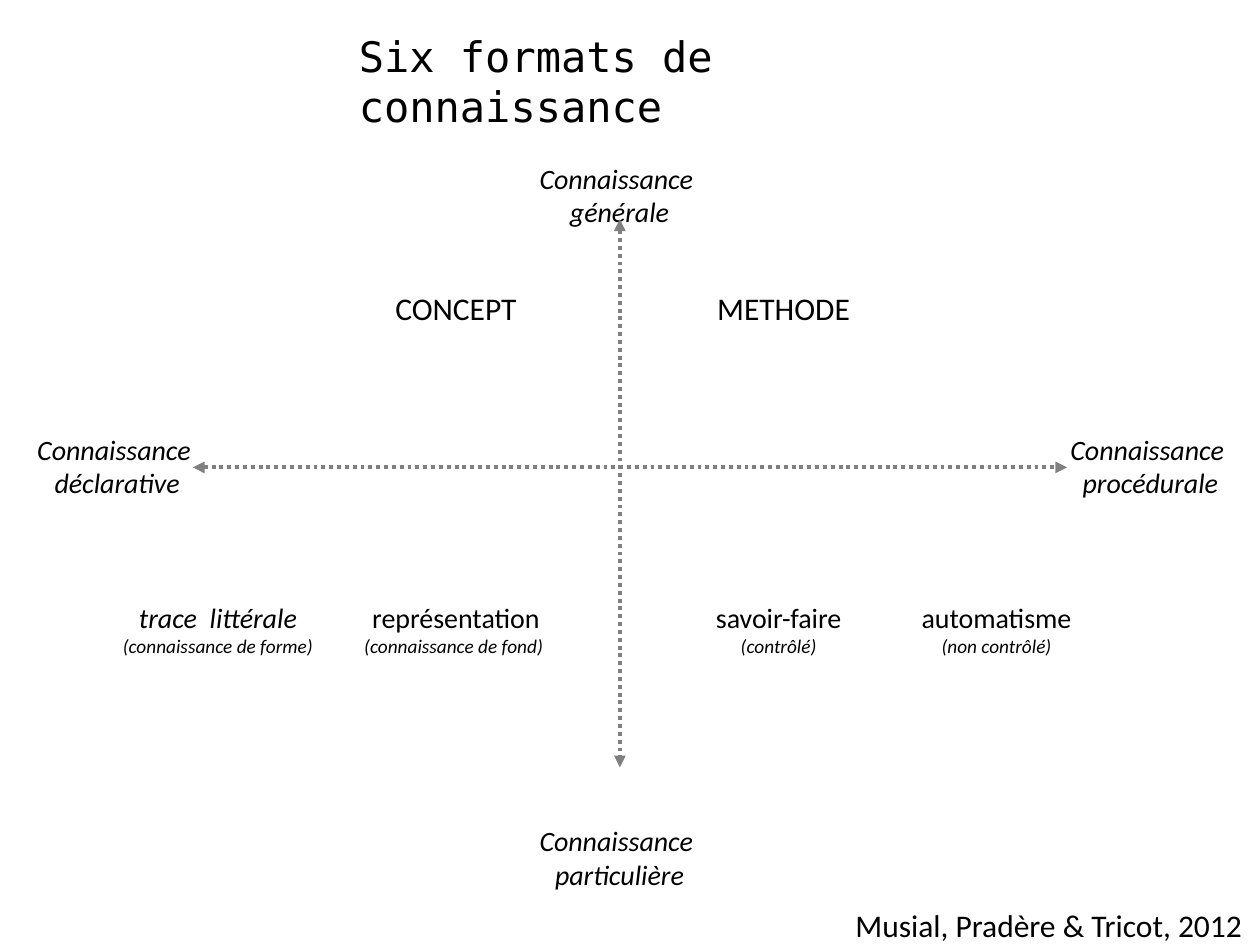
from lxml import etree
from pptx import Presentation
from pptx import util as u
from pptx.dml.color import RGBColor
from pptx.enum import dml, shapes, text
from pptx.oxml.ns import qn

COLORS = {"text": "000000", "axis": "808080", "fill": "FFFFFF"}
BODY_FONT, TITLE_FONT = "Calibri", "DejaVu Sans Mono"
LEFT, CENTER = text.PP_ALIGN.LEFT, text.PP_ALIGN.CENTER

TITLE = "Six formats de connaissance"
CREDIT = "Musial, Pradère & Tricot, 2012"

POLE_SIZE = (114, 46)
POLES = [
    ("Connaissance \ngénérale", 354, 88.5, False),
    ("Connaissance\n déclarative", 65.2, 243.4, True),
    ("Connaissance\n procédurale", 655.6, 243.4, True),
    ("Connaissance \nparticulière", 354, 467.3, False),
]

CONCEPT_ROW = {"middle": 175.7, "height": 67.7}
FORMAT_ROW = {"middle": 359.6, "height": 45.4}
FORMATS = [
    (CONCEPT_ROW, 260.6, 108, [("CONCEPT", 18, False)], False),
    (CONCEPT_ROW, 447.8, 108, [("METHODE", 18, False)], True),
    (FORMAT_ROW, 124.6, 108, [("trace  littérale", 16, True), ("(connaissance de forme)", 11, True)], False),
    (FORMAT_ROW, 260.6, 108, [("représentation", 16, False), ("(connaissance de fond) ", 11, True)], False),
    (FORMAT_ROW, 445, 90.7, [("savoir-faire", 16, False), ("(contrôlé)", 11, True)], True),
    (FORMAT_ROW, 569.5, 90.7, [("automatisme", 16, False), ("(non contrôlé)", 11, True)], False),
]

AXES = [(110.2, 267.1, 609.8, 267.1), (354.2, 125.3, 354.2, 438.5)]


def color(name):
    return RGBColor.from_string(COLORS[name])


def points(*values):
    return [u.Pt(value) for value in values]


def write(shape, lines, align=CENTER, font=BODY_FONT, wrap=False):
    frame = shape.text_frame
    frame.word_wrap = wrap
    frame.text = "\n".join(line for line, size, italic in lines)
    for paragraph, (line, size, italic) in zip(frame.paragraphs, lines):
        paragraph.alignment = align
        for run in paragraph.runs:
            run.font.name = font
            run.font.size = u.Pt(size)
            run.font.italic = italic
            run.font.color.rgb = color("text")


def add_text(slide, box, lines, **style):
    shape = slide.shapes.add_textbox(*points(*box))
    write(shape, lines, **style)
    shape.text_frame.auto_size = text.MSO_AUTO_SIZE.SHAPE_TO_FIT_TEXT


def add_format(slide, row, center, width, lines, filled):
    box = (center - width / 2, row["middle"] - row["height"] / 2, width, row["height"])
    shape = slide.shapes.add_shape(shapes.MSO_SHAPE.OVAL, *points(*box))
    shape.shadow.inherit = False
    shape.line.fill.background()
    if filled:
        shape.fill.solid()
        shape.fill.fore_color.rgb = color("fill")
    else:
        shape.fill.background()
    shape.text_frame.vertical_anchor = text.MSO_ANCHOR.MIDDLE
    write(shape, lines)


def add_axis(slide, ends):
    axis = slide.shapes.add_connector(shapes.MSO_CONNECTOR.STRAIGHT, *points(*ends))
    axis.line.color.rgb = color("axis")
    axis.line.width = u.Pt(2.25)
    axis.line.dash_style = dml.MSO_LINE.ROUND_DOT
    properties = axis.line._get_or_add_ln()
    properties.find(qn("a:prstDash")).set("val", "sysDot")
    for end in ("a:headEnd", "a:tailEnd"):
        etree.SubElement(properties, qn(end), type="triangle")
    etree.SubElement(axis._element.spPr, qn("a:effectLst"))


def main():
    presentation = Presentation()
    presentation.slide_width, presentation.slide_height = points(720, 540)
    slide = presentation.slides.add_slide(presentation.slide_layouts[6])

    for entry in FORMATS:
        add_format(slide, *entry)

    width, height = POLE_SIZE
    for label, center, top, wrap in POLES:
        lines = [(line, 16, True) for line in label.split("\n")]
        add_text(slide, (center - width / 2, top, width, height), lines, wrap=wrap)

    for ends in AXES:
        add_axis(slide, ends)

    add_text(slide, (198, 13.7, 324, 36.7), [(TITLE, 24, False)], align=LEFT, font=TITLE_FONT, wrap=True)
    add_text(slide, (481.7, 514, 238.3, 29), [(CREDIT, 18, False)], align=LEFT)

    presentation.save("out.pptx")


if __name__ == "__main__":
    main()
